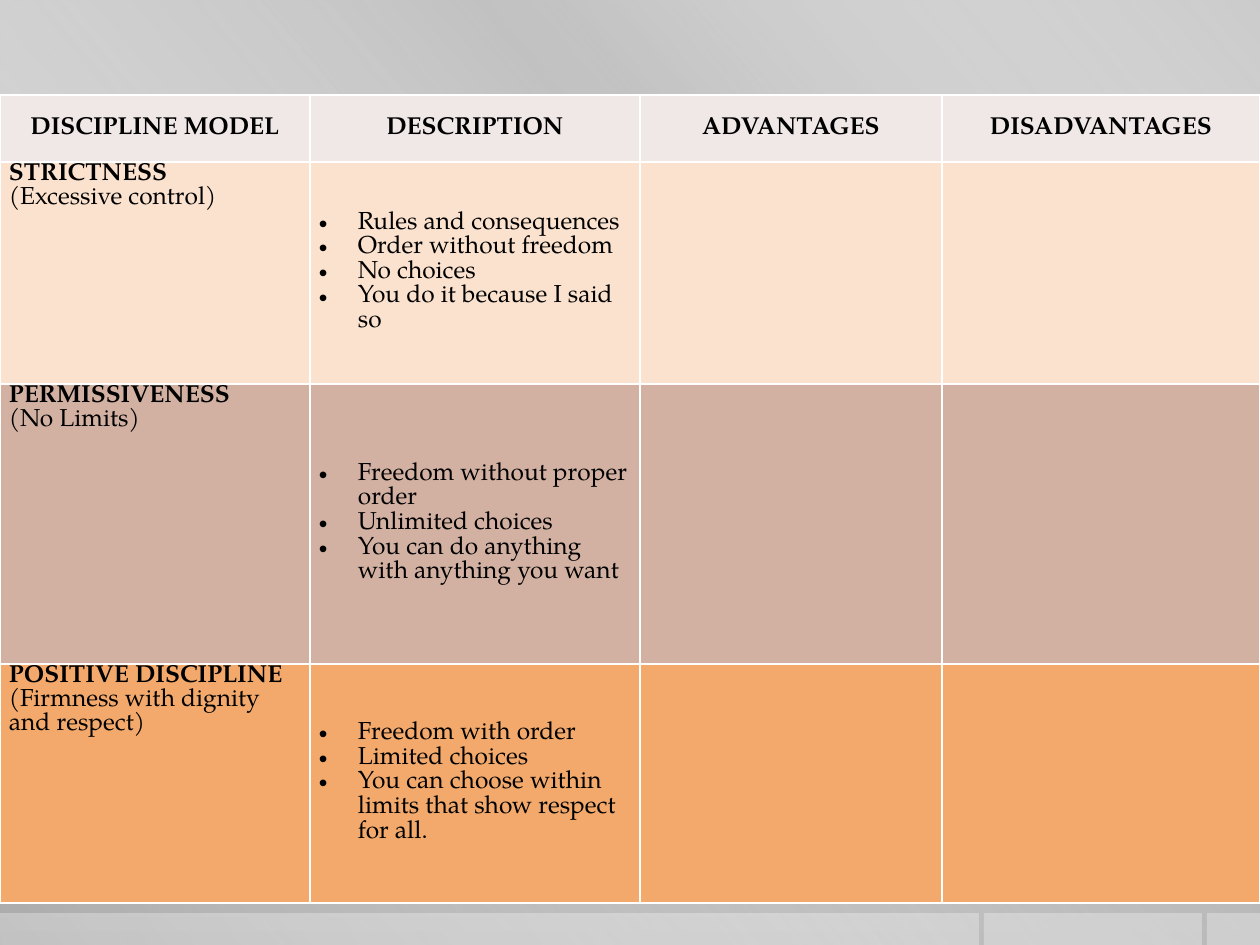
from dataclasses import dataclass

from lxml.etree import SubElement
from pptx import Presentation
from pptx.dml.color import RGBColor
from pptx.enum.shapes import MSO_SHAPE as Shape
from pptx.enum.text import MSO_ANCHOR as Anchor, PP_ALIGN as Align
from pptx.oxml.ns import qn
from pptx.util import Pt

PX = 914400 // 126  # EMU in one px
WIDTH, HEIGHT = 1260, 945


@dataclass(frozen=True)
class Theme:
    font: str = "TeX Gyre Pagella"
    size: float = 14
    line_spacing: float = 14.1
    text: str = "000000"
    white: str = "FFFFFF"
    header: str = "F0E7E7"
    border: float = 1
    # Gradient stops: position %, colour, opacity %
    backdrop: tuple = ((0, "CBCBCB", 100), (76, "C8C8C8", 100), (100, "A7A7A7", 100))
    sheen: tuple = ((0, "FFFFFF", 0), (34, "BFBFBF", 61),
                    (38, "BFBFBF", 76), (100, "FFFFFF", 0))


THEME = Theme()

TABLE_TOP = 95
COLUMN_WIDTHS = (310, 330, 302, 318)
HEADER_HEIGHT = 67
CELL_MARGIN = 9
BULLET_INDENT = 39

HEADERS = ("DISCIPLINE MODEL", "DESCRIPTION", "ADVANTAGES", "DISADVANTAGES")
# Name, explanation, description points, fill, row height
MODELS = (
    ("STRICTNESS", "(Excessive control)",
     ("Rules and consequences", "Order without freedom", "No choices",
      "You do it because I said so"), "FBE2CE", 222),
    ("PERMISSIVENESS", "(No Limits)",
     ("Freedom without proper order", "Unlimited choices",
      "You can do anything with anything you want"), "D2B1A2", 280),
    ("POSITIVE DISCIPLINE", "(Firmness with dignity and respect)",
     ("Freedom with order", "Limited choices",
      "You can choose within limits that show respect for all."), "F2A96B", 239),
)


def px(length):
    return length * PX


def set_gradient(fill, owner, stops, angle):
    fill.gradient()
    gradient = next(owner.iter(qn("a:gradFill")))
    for child in list(gradient):
        gradient.remove(child)
    stop_list = SubElement(gradient, qn("a:gsLst"))
    for position, color, opacity in stops:
        stop = SubElement(stop_list, qn("a:gs"), pos=str(position * 1000))
        rgb = SubElement(stop, qn("a:srgbClr"), val=color)
        SubElement(rgb, qn("a:alpha"), val=str(opacity * 1000))
    SubElement(gradient, qn("a:lin"), ang=str(angle * 60000), scaled="0")


def add_rectangle(shapes, left, top, width, height):
    shape = shapes.add_shape(Shape.RECTANGLE, px(left), px(top), px(width), px(height))
    shape.shadow.inherit = False
    shape.line.fill.background()
    return shape


def add_backdrop(slide):
    set_gradient(slide.background.fill, slide.element, THEME.backdrop, 90)
    sheen = add_rectangle(slide.shapes, 0, 0, WIDTH, HEIGHT)
    set_gradient(sheen.fill, sheen.element, THEME.sheen, 140)

    # Translucent strips along the bottom edge
    strips = slide.shapes.add_group_shape()
    for left, right in ((1207, WIDTH), (984, 1202), (0, 979)):
        strip = add_rectangle(strips.shapes, left, 913, right - left, HEIGHT - 913)
        strip.fill.solid()
        strip.fill.fore_color.rgb = RGBColor.from_string(THEME.white)
        rgb = next(strip.element.iter(qn("a:srgbClr")))
        SubElement(rgb, qn("a:alpha"), val="30000")


def style_cell(cell, color, anchor):
    cell.margin_left = cell.margin_right = px(CELL_MARGIN)
    cell.margin_top = cell.margin_bottom = 0
    cell.vertical_anchor = anchor
    # Borders come before the fill in the cell properties
    properties = cell._tc.get_or_add_tcPr()
    for side in ("a:lnL", "a:lnR", "a:lnT", "a:lnB"):
        line = SubElement(properties, qn(side), w=str(Pt(THEME.border)))
        SubElement(SubElement(line, qn("a:solidFill")), qn("a:srgbClr"), val=THEME.white)
    cell.fill.solid()
    cell.fill.fore_color.rgb = RGBColor.from_string(color)


def write_cell(cell, lines, align=Align.LEFT, bulleted=False):
    """Fill a cell with (text, bold) lines."""
    frame = cell.text_frame
    for index, (text, bold) in enumerate(lines):
        paragraph = frame.paragraphs[0] if index == 0 else frame.add_paragraph()
        paragraph.text = text
        paragraph.alignment = align
        paragraph.line_spacing = Pt(THEME.line_spacing)
        if bulleted:
            properties = paragraph._p.get_or_add_pPr()
            properties.set("marL", str(px(BULLET_INDENT)))
            properties.set("indent", str(-px(BULLET_INDENT)))
            SubElement(properties, qn("a:buFont"), typeface="Arial")
            SubElement(properties, qn("a:buChar"), char="•")
        font = paragraph.font
        font.name, font.size, font.bold = THEME.font, Pt(THEME.size), bold
        font.color.rgb = RGBColor.from_string(THEME.text)


def add_model_table(slide):
    heights = [HEADER_HEIGHT] + [model[-1] for model in MODELS]
    table = slide.shapes.add_table(
        len(heights), len(HEADERS), 0, px(TABLE_TOP), px(WIDTH), px(sum(heights))).table
    table.first_row = table.horz_banding = False
    for column, width in zip(table.columns, COLUMN_WIDTHS):
        column.width = px(width)
    for row, height in zip(table.rows, heights):
        row.height = px(height)

    # Header row
    for cell, header in zip(table.rows[0].cells, HEADERS):
        style_cell(cell, THEME.header, Anchor.MIDDLE)
        write_cell(cell, [(header, True)], Align.CENTER)

    # One row per model; the last two columns stay open
    for row, (name, explanation, points, color, _) in enumerate(MODELS, 1):
        for column in range(len(HEADERS)):
            style_cell(table.cell(row, column), color,
                       Anchor.MIDDLE if column == 1 else Anchor.TOP)
        write_cell(table.cell(row, 0), [(name, True), (explanation, False)])
        write_cell(table.cell(row, 1), [(point, False) for point in points], bulleted=True)


def main():
    presentation = Presentation()
    presentation.slide_width, presentation.slide_height = px(WIDTH), px(HEIGHT)
    slide = presentation.slides.add_slide(presentation.slide_layouts[6])
    add_backdrop(slide)
    add_model_table(slide)
    presentation.save("out.pptx")


if __name__ == "__main__":
    main()
